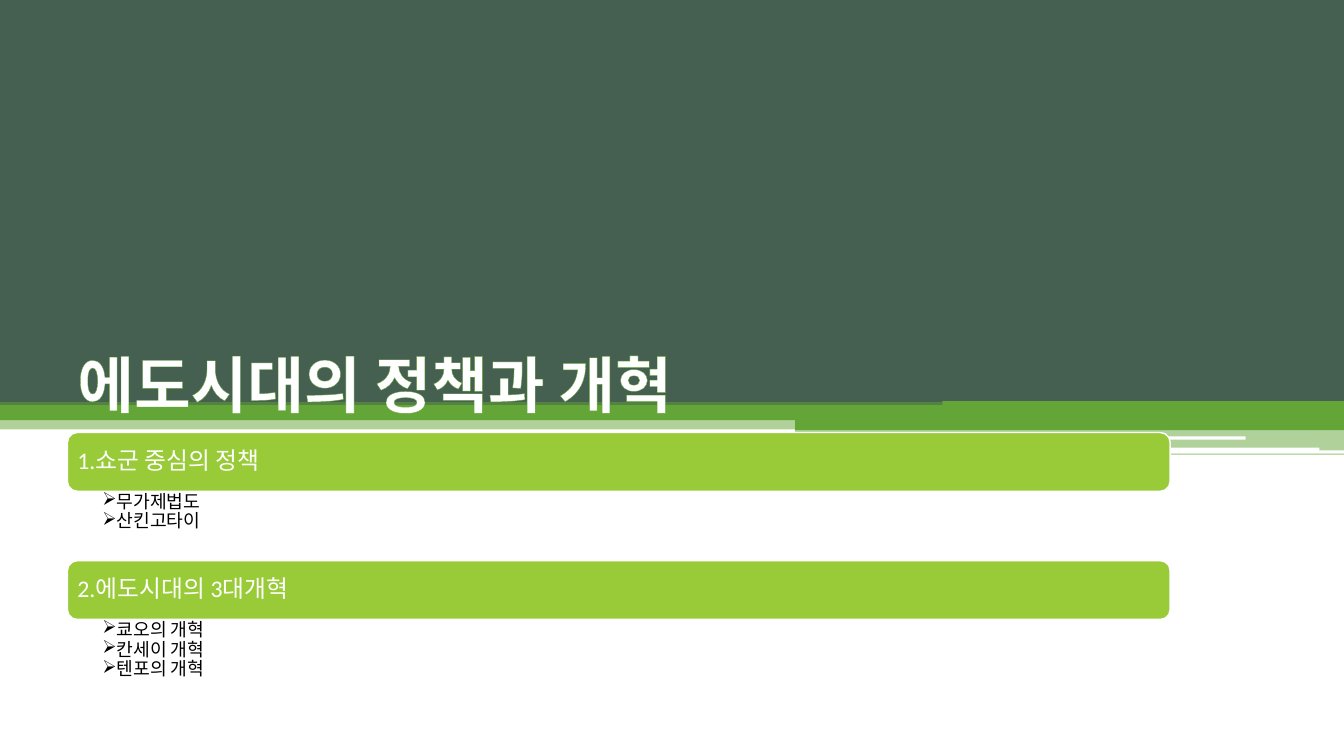
"""Build the section slide on Edo-period policies and reforms."""
from dataclasses import dataclass

from lxml.etree import SubElement
from pptx import Presentation
from pptx.dml.color import RGBColor
from pptx.enum.shapes import MSO_SHAPE
from pptx.enum.text import MSO_ANCHOR, PP_ALIGN
from pptx.oxml.ns import qn
from pptx.util import Cm, Pt


@dataclass(frozen=True)
class Theme:
    dark: str = "455F51"
    green: str = "63A537"
    lime: str = "99CB38"
    white: str = "FFFFFF"
    black: str = "000000"
    latin: str = "Calibri"
    korean: str = "Noto Sans CJK KR"
    title_size: float = 44
    heading_size: float = 17
    item_size: float = 13


theme = Theme()


def add_block(kind, box, color, opacity=100):
    shape = slide.shapes.add_shape(kind, *[Cm(length) for length in box])
    shape.shadow.inherit = False
    shape.fill.solid()
    shape.fill.fore_color.rgb = RGBColor.from_string(color)
    shape.line.fill.background()
    if opacity < 100:
        color_element = shape.fill._xPr.find(qn("a:solidFill"))[0]
        SubElement(color_element, qn("a:alpha"), val=str(opacity * 1000))
    return shape


def write_text(shape, lines, insets, anchor, spacing, font_format, color):
    frame = shape.text_frame
    frame.word_wrap = True
    frame.vertical_anchor = anchor
    for side, inset in zip(("left", "top", "right", "bottom"), insets):
        setattr(frame, f"margin_{side}", Cm(inset))
    frame.text = "\n".join(lines)
    for paragraph in frame.paragraphs:
        paragraph.alignment = PP_ALIGN.LEFT
        paragraph.line_spacing = spacing
        paragraph.space_after = Pt(0)
        font = paragraph.runs[0].font
        for name, value in font_format.items():
            setattr(font, name, value)
        font.color.rgb = RGBColor.from_string(color)
        SubElement(font._element, qn("a:ea"), typeface=theme.korean)
    return frame.paragraphs


presentation = Presentation()
presentation.slide_width = Cm(33.87)
presentation.slide_height = Cm(19.05)
slide = presentation.slides.add_slide(presentation.slide_layouts[6])

bands = [
    (MSO_SHAPE.RECTANGLE, (0, 0, 33.87, 10.29), theme.dark, 100),
    (MSO_SHAPE.RECTANGLE, (20.04, 10.59, 13.83, 0.25), theme.green, 100),
    (MSO_SHAPE.RECTANGLE, (20.04, 10.82, 13.83, 0.53), theme.green, 50),
    (MSO_SHAPE.RECTANGLE, (20.04, 11.43, 13.83, 0.03), theme.green, 65),
    (MSO_SHAPE.ROUNDED_RECTANGLE, (20.04, 11, 11.35, 0.08), theme.white, 100),
    (MSO_SHAPE.ROUNDED_RECTANGLE, (27.33, 11.28, 5.92, 0.1), theme.white, 100),
    (MSO_SHAPE.RECTANGLE, (0, 10.13, 33.87, 0.69), theme.green, 50),
    (MSO_SHAPE.RECTANGLE, (0, 10.21, 33.87, 0.38), theme.green, 100),
    (MSO_SHAPE.RECTANGLE, (23.75, 10.11, 10.12, 0.69), theme.green, 100),
]
for band in bands:
    add_block(*band)

title = slide.shapes.add_textbox(Cm(1.7), Cm(6.63), Cm(31.32), Cm(4.09))
title_format = {"name": theme.korean, "size": Pt(theme.title_size), "bold": True}
title_paragraph = write_text(
    title, ["에도시대의 정책과 개혁"], (0.25, 0.13, 0.25, 0.13),
    MSO_ANCHOR.BOTTOM, 1.0, title_format, theme.white)[0]
properties = title_paragraph.runs[0].font._element
outline = SubElement(properties, qn("a:ln"), w=str(Pt(0.52)))
SubElement(SubElement(outline, qn("a:solidFill")), qn("a:srgbClr"), val=theme.green)
properties.insert(0, outline)

left, first_top, width, heading_height, pitch = 1.7, 10.9, 27.79, 1.48, 3.23
sections = [
    ("1.쇼군 중심의 정책", ["무가제법도", "산킨고타이"], 1.75),
    ("2.에도시대의 3대개혁", ["쿄오의 개혁", "칸세이 개혁", "텐포의 개혁"], 2.64),
]
heading_format = {"name": theme.latin, "size": Pt(theme.heading_size)}
item_format = {"name": theme.latin, "size": Pt(theme.item_size)}
for index, (heading, items, items_height) in enumerate(sections):
    top = first_top + index * pitch
    bar = add_block(MSO_SHAPE.ROUNDED_RECTANGLE,
                    (left, top, width, heading_height), theme.lime)
    bar.line.color.rgb = RGBColor.from_string(theme.white)
    bar.line.width = Pt(1)
    write_text(bar, [heading], (0.18,) * 4, MSO_ANCHOR.MIDDLE, 0.9,
               heading_format, theme.white)

    item_box = slide.shapes.add_textbox(
        Cm(left), Cm(top + heading_height - 0.02), Cm(width), Cm(items_height))
    paragraphs = write_text(item_box, items, (0.88, 0.05, 0.33, 0.05),
                            MSO_ANCHOR.TOP, 0.9, item_format, theme.black)
    for paragraph in paragraphs:
        paragraph.level = 1
        paragraph_properties = paragraph._p.get_or_add_pPr()
        paragraph_properties.set("marL", str(Cm(0.31)))
        paragraph_properties.set("indent", str(Cm(-0.31)))
        SubElement(paragraph_properties, qn("a:buChar"), char="➢")

presentation.save("out.pptx")
